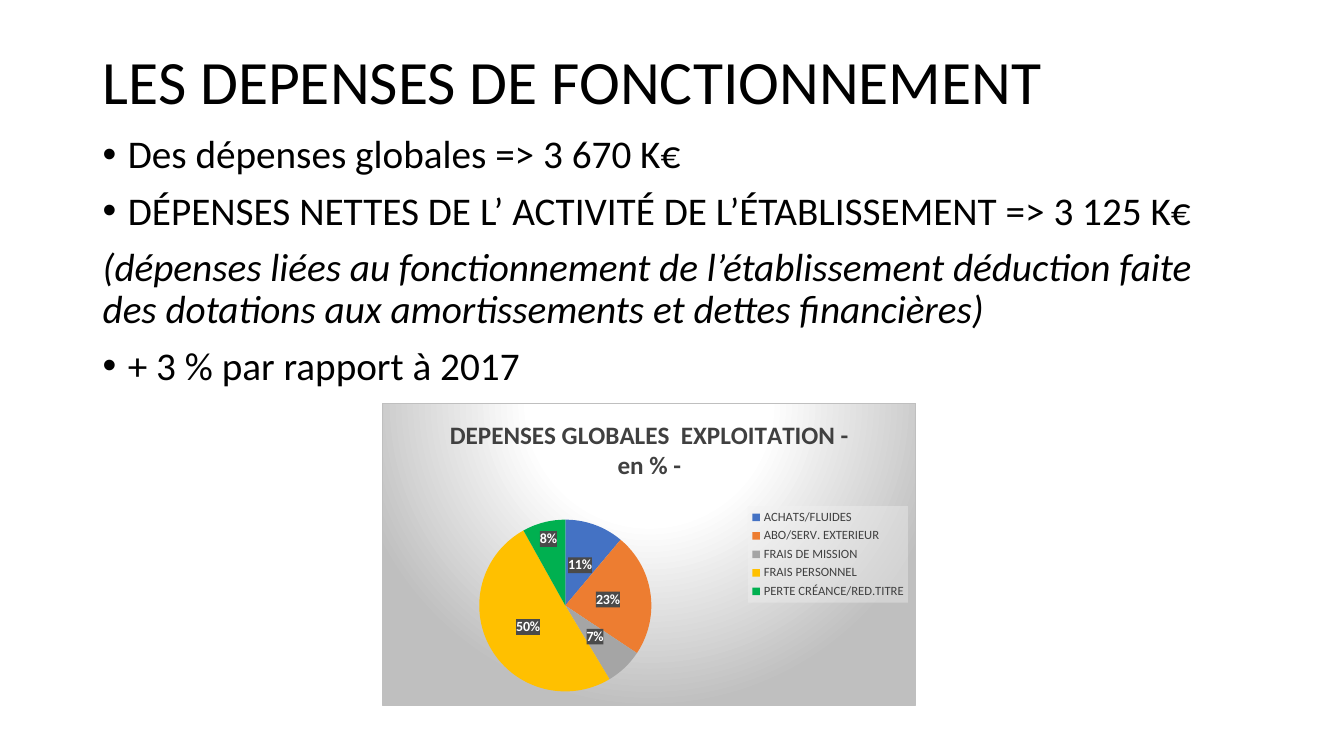
import copy

import lxml.etree
import pptx
import pptx.chart.data
import pptx.dml.color
import pptx.enum.chart
import pptx.enum.text
import pptx.oxml
import pptx.oxml.ns
import pptx.util

RGB = pptx.dml.color.RGBColor
Pt = pptx.util.Pt
qn = pptx.oxml.ns.qn

# Content
HEADING = "LES DEPENSES DE FONCTIONNEMENT"
POINTS = [  # text, bulleted
    ("Des dépenses globales => 3 670 K€", True),
    ("DÉPENSES NETTES DE L’ ACTIVITÉ DE L’ÉTABLISSEMENT => 3 125 K€", True),
    ("(dépenses liées au fonctionnement de l’établissement déduction faite "
     "des dotations aux amortissements et dettes financières)", False),
    ("+ 3 % par rapport à 2017", True),
]
CHART_TITLE = "DEPENSES GLOBALES  EXPLOITATION -\nen % -"
EXPENSES = [  # name, percentage, colour
    ("ACHATS/FLUIDES", 11, RGB(0x44, 0x72, 0xC4)),
    ("ABO/SERV. EXTERIEUR", 23, RGB(0xED, 0x7D, 0x31)),
    ("FRAIS DE MISSION", 7, RGB(0xA5, 0xA5, 0xA5)),
    ("FRAIS PERSONNEL", 50, RGB(0xFF, 0xC0, 0x00)),
    ("PERTE CRÉANCE/RED.TITRE", 8, RGB(0x00, 0xB0, 0x50)),
]
BLACK = RGB(0, 0, 0)
WHITE = RGB(0xFF, 0xFF, 0xFF)
SLATE = RGB(0x40, 0x40, 0x40)
LABEL_BOX = RGB(0x4A, 0x4A, 0x4A)
SILVER = RGB(0xBF, 0xBF, 0xBF)
PALE = RGB(0xF2, 0xF2, 0xF2)
FONT = "Calibri"

# Slide, with areas as left, top, width, height in inches
WIDTH, HEIGHT = 13.33, 7.5
MARGIN = 0.92
HEADING_AREA = (MARGIN, 0.39, 11.5, 0.89)
POINTS_AREA = (MARGIN, 1.29, 11.5, 5.71)
CHART_AREA = (3.79, 4, 5.3, 3)
# Shares of the chart's size
PIE_AREA = (0.18, 0.385, 0.325, 0.57)
LEGEND_AREA = (0.685, 0.34, 0.3, 0.32)
RIM_SHIFT = (-0.01, 0.01)

deck = pptx.Presentation()
deck.slide_width = pptx.util.Inches(WIDTH)
deck.slide_height = pptx.util.Inches(HEIGHT)
slide = deck.slides.add_slide(deck.slide_layouts[6])


def inches(area):
    return [pptx.util.Inches(length) for length in area]


def set_font(font, size, color, bold=False):
    font.name, font.size, font.bold = FONT, Pt(size), bold
    font.color.rgb = color


def text_frame(area, anchor):
    frame = slide.shapes.add_textbox(*inches(area)).text_frame
    frame.word_wrap = True
    frame.vertical_anchor = anchor
    return frame


def chart_xml(tag, content):
    return pptx.oxml.parse_xml(
        f'<c:{tag} {pptx.oxml.ns.nsdecls("c", "a")}>{content}</c:{tag}>')


def solid(color, alpha):
    return chart_xml("spPr", f'<a:solidFill><a:srgbClr val="{color}">'
                     f'<a:alpha val="{alpha * 1000}"/></a:srgbClr></a:solidFill>')


def place(parent, index, shares, inner=False, edge=True):
    for old in parent.findall(qn("c:layout")):
        parent.remove(old)
    target = '<c:layoutTarget val="inner"/>' if inner else ""
    modes = "".join(f'<c:{axis}Mode val="edge"/>' for axis in "xy") if edge else ""
    sizes = "".join(f'<c:{side} val="{share}"/>' for side, share in zip("xywh", shares))
    parent.insert(index, chart_xml(
        "layout", f"<c:manualLayout>{target}{modes}{sizes}</c:manualLayout>"))


# Heading
heading = text_frame(HEADING_AREA, pptx.enum.text.MSO_ANCHOR.MIDDLE).paragraphs[0]
heading.text = HEADING
heading.line_spacing = 0.9
set_font(heading.font, 44, BLACK)

# Points
points = text_frame(POINTS_AREA, pptx.enum.text.MSO_ANCHOR.TOP)
for number, (text, bulleted) in enumerate(POINTS):
    point = points.add_paragraph() if number else points.paragraphs[0]
    point.text = text
    point.line_spacing = 0.9
    point.space_before = Pt(10)
    set_font(point.font, 28, BLACK)
    point.font.italic = not bulleted
    if bulleted:
        properties = point._p.get_or_add_pPr()
        indent = pptx.util.Inches(0.25)
        properties.set("marL", str(indent))
        properties.set("indent", str(-indent))
        lxml.etree.SubElement(properties, qn("a:buFont")).set("typeface", "Arial")
        lxml.etree.SubElement(properties, qn("a:buChar")).set("char", "•")

# Pie chart
names, percentages, colors = zip(*EXPENSES)
data = pptx.chart.data.CategoryChartData()
data.categories = names
data.add_series("Series 1", percentages)
chart = slide.shapes.add_chart(
    pptx.enum.chart.XL_CHART_TYPE.PIE, *inches(CHART_AREA), data).chart
set_font(chart.font, 10, BLACK)
chart.has_title = True
chart.chart_title.text_frame.text = CHART_TITLE
chart.chart_title.include_in_layout = False
for line in chart.chart_title.text_frame.paragraphs:
    set_font(line.font, 18, SLATE, bold=True)

pie = chart.plots[0]
pie.vary_by_categories = True
expenses = pie.series[0]
for number, color in enumerate(colors):
    fill = expenses.points[number].format.fill
    fill.solid()
    fill.fore_color.rgb = color
place(chart._chartSpace.chart.plotArea, 0, PIE_AREA, inner=True)

# Percentages on dark boxes
POSITION = pptx.enum.chart.XL_LABEL_POSITION
labels = expenses.data_labels
labels.show_value, labels.show_percentage = True, False
labels.number_format, labels.number_format_is_linked = '0"%"', False
labels.position = POSITION.CENTER
set_font(labels.font, 10, WHITE, bold=True)
labels._element.find(qn("c:txPr")).addprevious(solid(LABEL_BOX, 90))

# The last percentage sits near the rim
expenses.points[len(EXPENSES) - 1].data_label.position = POSITION.INSIDE_END
rim = labels._element.find(qn("c:dLbl"))
for tag in ("c:numFmt", "c:spPr", "c:txPr"):
    for old in rim.findall(qn(tag)):
        rim.remove(old)
    rim.find(qn("c:dLblPos")).addprevious(copy.deepcopy(labels._element.find(qn(tag))))
place(rim, 1, RIM_SHIFT, edge=False)

# Legend
chart.has_legend = True
legend = chart.legend
legend.position = pptx.enum.chart.XL_LEGEND_POSITION.RIGHT
legend.include_in_layout = False
set_font(legend.font, 9, SLATE)
place(legend._element, 1, LEGEND_AREA)
legend._element.find(qn("c:txPr")).addprevious(solid(PALE, 39))

# Chart background
stops = "".join(f'<a:gs pos="{share * 1000}"><a:srgbClr val="{color}"/></a:gs>'
                for share, color in ((0, WHITE), (39, WHITE), (100, SILVER)))
chart._chartSpace.chart.addnext(chart_xml(
    "spPr",
    f'<a:gradFill><a:gsLst>{stops}</a:gsLst><a:path path="circle">'
    '<a:fillToRect l="50000" t="-80000" r="50000" b="180000"/></a:path></a:gradFill>'
    f'<a:ln w="{Pt(0.75)}"><a:solidFill><a:srgbClr val="{SILVER}"/></a:solidFill></a:ln>'))

deck.save("out.pptx")
